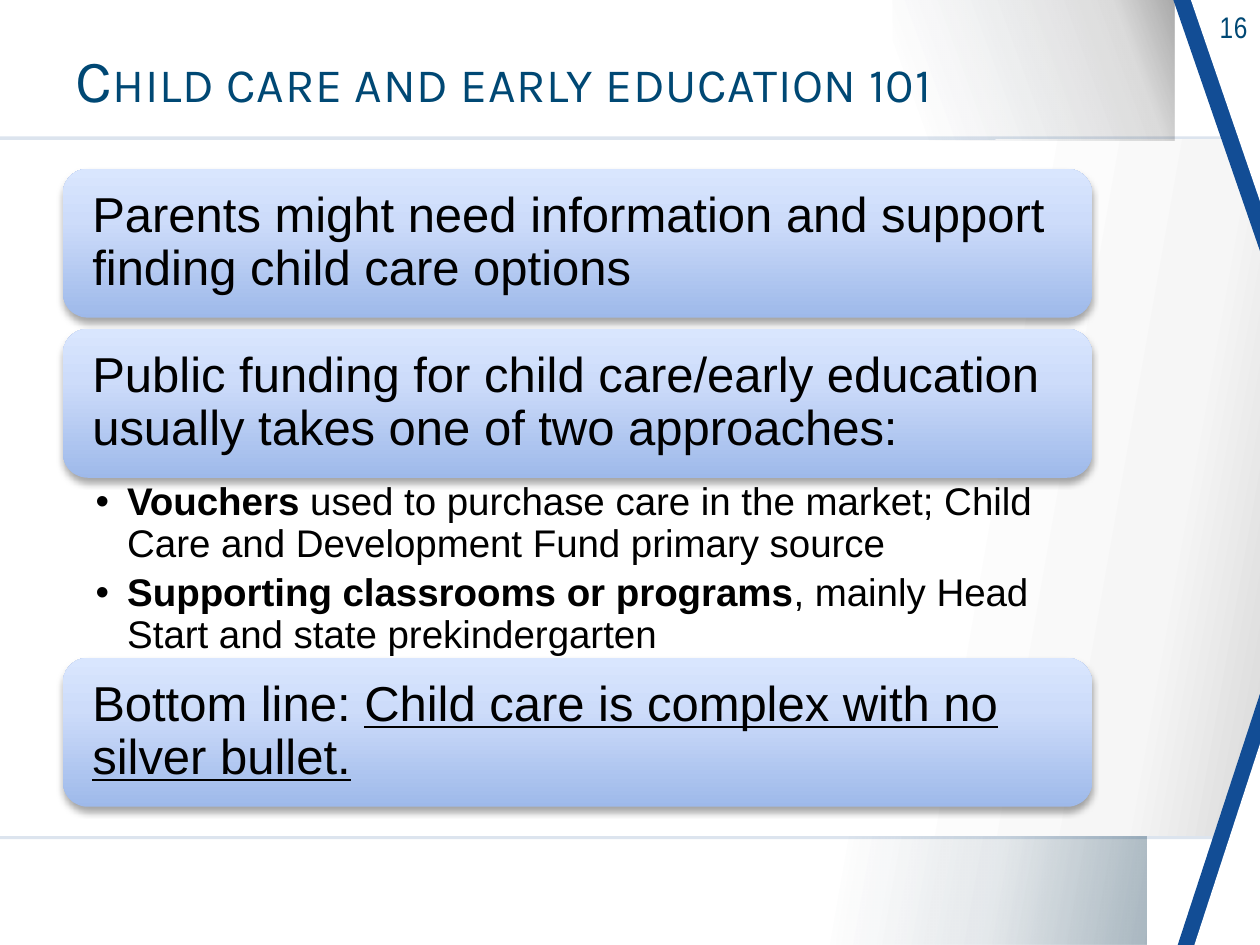
"""Build the child care and early education slide."""
import pptx
import pptx.dml.color
import pptx.enum.shapes
import pptx.enum.text
import pptx.oxml.ns
import pptx.oxml.xmlchemy
import pptx.util
from lxml import etree

Pt = pptx.util.Pt
qn = pptx.oxml.ns.qn
SHAPES = pptx.enum.shapes.MSO_SHAPE
ALIGN = pptx.enum.text.PP_ALIGN
ANCHOR = pptx.enum.text.MSO_ANCHOR

NAVY, BLUE, WHITE, BLACK = "004874", "124D95", "FFFFFF", "000000"
TITLE = "Child care and early education 101"
PAGE_NUMBER = "16"
OPENING_CARDS = [
    [("Parents might need information and support finding child care options", {})],
    [("Public funding for child care/early education usually takes one of two approaches:", {})],
]
APPROACHES = [
    [("Vouchers", {"bold": True}),
     (" used to purchase care in the market; Child Care and Development Fund primary source", {})],
    [("Supporting classrooms or programs", {"bold": True}),
     (", mainly Head Start and state prekindergarten", {})],
]
CLOSING_CARD = [("Bottom line: ", {}),
                ("Child care is complex with no silver bullet.", {"underline": True})]

PANELS = [
    ((0, 80, 720, 397.5), 10,
     [(0, WHITE, 100), (72, WHITE, 100), (90, "F6F6F6", 100), (100, "D9D9D9", 100)]),
    ((463, 478, 192, 62), 10, [(10, "002C47", 0), (56, "002C47", 11), (100, "002C47", 34)]),
    ((510, 0, 161, 80.5), 340, [(10, "002C47", 0), (81, BLACK, 14), (100, BLACK, 34)]),
]
CARD_STOPS = [(0, "9EB9EA", 100), (65, "CDDCFA", 100), (100, "D9E6FE", 100)]
TRIANGLES = [
    ((670.5, 0, 49.5, 143.5), True, BLUE),
    ((680.5, 0, 39.5, 115), True, WHITE),
    ((673, 396.5, 47, 143.5), False, BLUE),
    ((682.5, 425, 37.5, 115), False, WHITE),
]
CARD_LEFT, CARD_TOP, CARD_WIDTH, CARD_HEIGHT, CARD_GAP = 36, 96.5, 588, 85, 6.5
APPROACHES_HEIGHT = 103


def color(value):
    return pptx.dml.color.RGBColor.from_string(value)


def add_color(parent, value, opacity):
    element = etree.SubElement(parent, qn("a:srgbClr"), val=value)
    if opacity < 100:
        etree.SubElement(element, qn("a:alpha"), val=str(opacity * 1000))


def add_shape(slide, kind, box):
    shape = slide.shapes.add_shape(kind, *map(Pt, box))
    shape.shadow.inherit = False
    shape.line.fill.background()
    return shape


def fill_solid(shape, value):
    shape.fill.solid()
    shape.fill.fore_color.rgb = color(value)


def fill_gradient(shape, angle, stops):
    shape.fill.gradient()
    shape.fill.gradient_angle = 360 - angle
    stop_list = shape._element.spPr.find(qn("a:gradFill")).find(qn("a:gsLst"))
    for stop in list(stop_list):
        stop_list.remove(stop)
    for position, value, opacity in stops:
        stop = etree.SubElement(stop_list, qn("a:gs"), pos=str(position * 1000))
        add_color(stop, value, opacity)


def add_shadow(shape):
    effects = shape._element.spPr.find(qn("a:effectLst"))
    shadow = etree.SubElement(effects, qn("a:outerShdw"), blurRad=str(Pt(4)), dist=str(Pt(3)),
                              dir="5400000", rotWithShape="0")
    add_color(shadow, BLACK, 35)


def set_frame(shape, margins, anchor):
    frame = shape.text_frame
    frame.word_wrap = True
    frame.vertical_anchor = anchor
    frame.margin_left, frame.margin_top, frame.margin_right, frame.margin_bottom = map(Pt, margins)
    return frame


def add_runs(paragraph, parts, font, size, value, spacing=1.0, align=ALIGN.LEFT):
    paragraph.alignment = align
    paragraph.line_spacing = spacing
    for text, style in parts:
        run = paragraph.add_run()
        run.text = text
        run.font.name = font
        run.font.size = Pt(size)
        run.font.color.rgb = color(value)
        for name, setting in style.items():
            setattr(run.font, name, setting)


def add_label(slide, box, anchor, text, font, size, spacing, align, **attributes):
    label = slide.shapes.add_textbox(*map(Pt, box))
    paragraph = set_frame(label, (7.2, 3.6, 7.2, 3.6), anchor).paragraphs[0]
    add_runs(paragraph, [(text, {})], font, size, NAVY, spacing, align)
    for name, setting in attributes.items():
        paragraph.runs[0].font._element.set(name, setting)


def add_card(slide, top, parts):
    card = add_shape(slide, SHAPES.ROUNDED_RECTANGLE, (CARD_LEFT, top, CARD_WIDTH, CARD_HEIGHT))
    fill_gradient(card, 270, CARD_STOPS)
    add_shadow(card)
    frame = set_frame(card, (12.6,) * 4, ANCHOR.MIDDLE)
    add_runs(frame.paragraphs[0], parts, "Arial", 28, BLACK, 0.9)


def add_approaches(slide, top):
    box = slide.shapes.add_textbox(*map(Pt, (CARD_LEFT, top, CARD_WIDTH, APPROACHES_HEIGHT)))
    frame = set_frame(box, (18.7, 2.8, 15.8, 2.8), ANCHOR.TOP)
    for index, parts in enumerate(APPROACHES):
        paragraph = frame.add_paragraph() if index else frame.paragraphs[0]
        properties = paragraph._p.get_or_add_pPr()
        properties.set("marL", str(Pt(18)))
        properties.set("indent", str(-Pt(18)))
        etree.SubElement(properties, qn("a:buFont"), typeface="Arial")
        etree.SubElement(properties, qn("a:buChar"), char="•")
        paragraph.space_after = Pt(4.4)
        add_runs(paragraph, parts, "Arial", 22, BLACK, 0.9)


def add_background(slide):
    band = add_shape(slide, SHAPES.RECTANGLE, (0, 78, 720, 401.5))
    fill_solid(band, "275A99")
    band_color = band._element.spPr.find(qn("a:solidFill")).find(qn("a:srgbClr"))
    etree.SubElement(band_color, qn("a:alpha"), val="16000")
    for box, angle, stops in PANELS:
        fill_gradient(add_shape(slide, SHAPES.RECTANGLE, box), angle, stops)
    for box, points_down, value in TRIANGLES:
        triangle = add_shape(slide, SHAPES.ISOSCELES_TRIANGLE, box)
        triangle.adjustments[0] = 0 if points_down else 1
        triangle.rotation = 180 if points_down else 0
        fill_solid(triangle, value)


def main():
    presentation = pptx.Presentation()
    presentation.slide_width, presentation.slide_height = Pt(720), Pt(540)
    slide = presentation.slides.add_slide(presentation.slide_layouts[6])
    add_background(slide)
    add_label(slide, (662.5, 1.5, 57.5, 28), ANCHOR.TOP, PAGE_NUMBER, "Arial Narrow", 17, 1.0,
              ALIGN.RIGHT, spc="40")
    add_label(slide, (36, 17.5, 565, 61), ANCHOR.MIDDLE, TITLE, "Karla", 34.2, 0.85,
              ALIGN.LEFT, spc="40", cap="small")
    top = CARD_TOP
    for parts in OPENING_CARDS:
        add_card(slide, top, parts)
        top += CARD_HEIGHT + CARD_GAP
    top -= CARD_GAP
    add_approaches(slide, top)
    add_card(slide, top + APPROACHES_HEIGHT, CLOSING_CARD)
    presentation.save("out.pptx")


if __name__ == "__main__":
    main()
